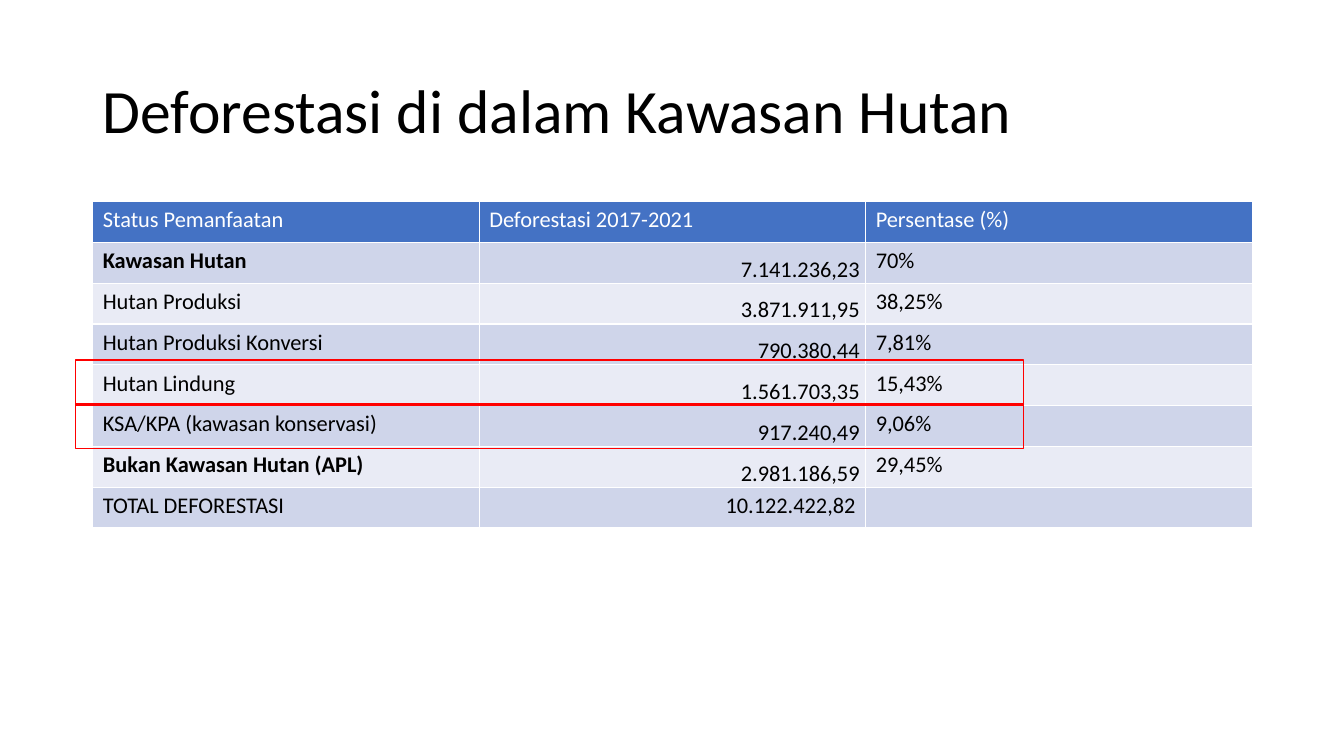
import pptx
import pptx.dml.color
import pptx.enum.shapes
import pptx.enum.text
import pptx.util

Inches = pptx.util.Inches
Pt = pptx.util.Pt
RGBColor = pptx.dml.color.RGBColor
Align = pptx.enum.text.PP_ALIGN
Anchor = pptx.enum.text.MSO_ANCHOR

BLACK = RGBColor(0x00, 0x00, 0x00)
WHITE = RGBColor(0xFF, 0xFF, 0xFF)
RED = RGBColor(0xFF, 0x00, 0x00)
HEADER_BLUE = RGBColor(0x44, 0x72, 0xC4)
BANDS = (RGBColor(0xCF, 0xD5, 0xEA), RGBColor(0xE9, 0xEB, 0xF5))

ROWS = [
    ("Status Pemanfaatan", "Deforestasi 2017-2021", "Persentase (%)"),
    ("Kawasan Hutan", "7.141.236,23", "70%"),
    ("Hutan Produksi", "3.871.911,95", "38,25%"),
    ("Hutan Produksi Konversi", "790.380,44", "7,81%"),
    ("Hutan Lindung", "1.561.703,35", "15,43%"),
    ("KSA/KPA (kawasan konservasi)", "917.240,49", "9,06%"),
    ("Bukan Kawasan Hutan (APL)", "2.981.186,59", "29,45%"),
    ("TOTAL DEFORESTASI", "10.122.422,82", ""),
]
BOLD_LABELS = ("Kawasan Hutan", "Bukan Kawasan Hutan (APL)")


class SlideBuilder:
    """Holds the text style and the page being filled."""

    def __init__(self, page, font="Calibri"):
        self.page = page
        self.font = font

    def add_span(self, para, text, size, color, bold=False):
        span = para.add_run()
        span.text = text
        span.font.name = self.font
        span.font.size = Pt(size)
        span.font.color.rgb = color
        span.font.bold = bold

    def title(self, text, left, top, width, height):
        box = self.page.shapes.add_textbox(
            Inches(left), Inches(top), Inches(width), Inches(height))
        frame = box.text_frame
        frame.word_wrap = True
        frame.vertical_anchor = Anchor.MIDDLE
        para = frame.paragraphs[0]
        para.line_spacing = 0.9
        self.add_span(para, text, 44, BLACK)

    def table(self, rows, left, top, width, height):
        # The default table style supplies the white cell borders
        table = self.page.shapes.add_table(
            len(rows), len(rows[0]), Inches(left), Inches(top),
            Inches(width), Inches(height)).table
        for row_number, row in enumerate(rows):
            for column, text in enumerate(row):
                cell = table.cell(row_number, column)
                header = row_number == 0
                cell.fill.solid()
                cell.fill.fore_color.rgb = (
                    HEADER_BLUE if header else BANDS[(row_number - 1) % 2])
                if text:
                    self.add_span(cell.text_frame.paragraphs[0], text, 16,
                                  WHITE if header else BLACK,
                                  text in BOLD_LABELS)
                if column == 1 and not header:
                    self.align_amount(cell, total=row_number == len(rows) - 1)

    def align_amount(self, cell, total):
        cell.text_frame.paragraphs[0].alignment = Align.RIGHT
        if not total:
            cell.vertical_anchor = Anchor.BOTTOM
            cell.margin_left = cell.margin_top = Inches(0.01)
            cell.margin_right = Inches(0.06)
            cell.margin_bottom = Inches(0)

    def highlight(self, left, top, width, height):
        frame = self.page.shapes.add_shape(
            pptx.enum.shapes.MSO_SHAPE.RECTANGLE,
            Inches(left), Inches(top), Inches(width), Inches(height))
        frame.shadow.inherit = False
        frame.fill.background()
        frame.line.color.rgb = RED
        frame.line.width = Pt(1)


def main():
    deck = pptx.Presentation()
    deck.slide_width = Inches(13.33)
    deck.slide_height = Inches(7.5)
    builder = SlideBuilder(deck.slides.add_slide(deck.slide_layouts[6]))

    # Heading and figures
    builder.title("Deforestasi di dalam Kawasan Hutan", 0.92, 0.4, 11.5, 1.45)
    builder.table(ROWS, 0.92, 2, 11.5, 3.24)

    # Frames around the protected and conservation forest rows
    for top in (4, 3.57):
        builder.highlight(0.75, top, 9.4, 0.45)

    deck.save("out.pptx")


if __name__ == "__main__":
    main()
